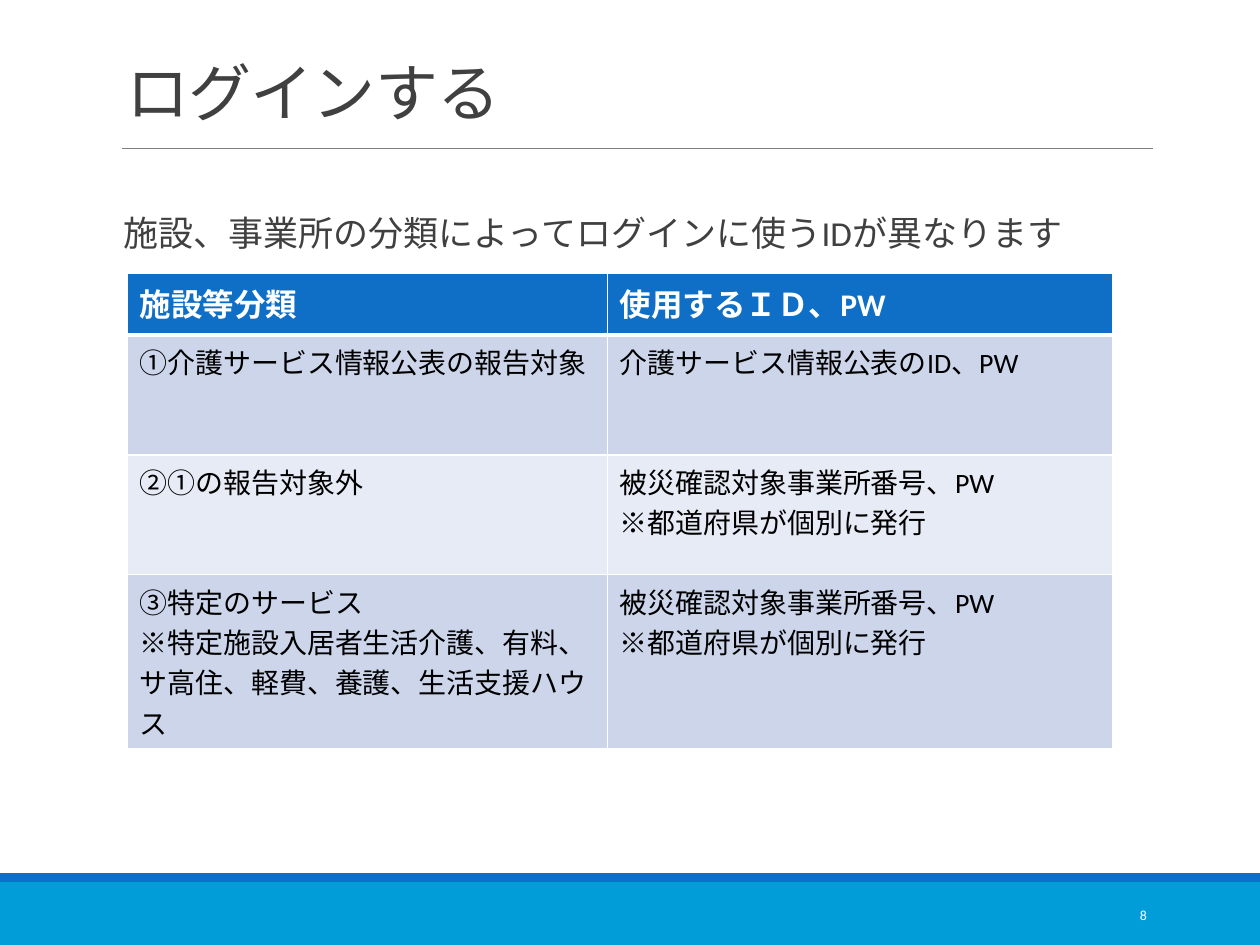
from lxml import etree
from pptx import Presentation
from pptx.dml.color import RGBColor
from pptx.enum.shapes import MSO_CONNECTOR, MSO_SHAPE
from pptx.enum.text import MSO_ANCHOR, MSO_AUTO_SIZE, PP_ALIGN
from pptx.oxml.ns import qn
from pptx.util import Inches, Pt

LEFT, RIGHT = PP_ALIGN.LEFT, PP_ALIGN.RIGHT
TOP, MIDDLE, BOTTOM = MSO_ANCHOR.TOP, MSO_ANCHOR.MIDDLE, MSO_ANCHOR.BOTTOM
NO_FIT = MSO_AUTO_SIZE.NONE
RECT, STRAIGHT = MSO_SHAPE.RECTANGLE, MSO_CONNECTOR.STRAIGHT

FONT = "Calibri"
BLUE, CYAN, GRAY, TEXT = "0F6FC6", "009DD9", "808080", "404040"
WHITE, BLACK = "FFFFFF", "000000"
BANDS = ("CCD5EA", "E7EBF5")


def rgb(value):
    return RGBColor.from_string(value)


class SlideBuilder:
    def __init__(self, s):
        self.s = s

    def style(self, p, size, color, bold=False):
        for r in p.runs:
            r.font.name, r.font.size, r.font.bold = FONT, Pt(size), bold
            r.font.color.rgb = rgb(color)
            r._r.get_or_add_rPr().set("lang", "ja-JP")

    def bar(self, x, y, w, h, color):
        sp = self.s.shapes.add_shape(RECT, Inches(x), Inches(y), Inches(w), Inches(h))
        sp.shadow.inherit = False
        sp.fill.solid()
        sp.fill.fore_color.rgb = rgb(color)
        sp.line.fill.background()

    def rule(self, x1, x2, y, color, width):
        line = self.s.shapes.add_connector(
            STRAIGHT, Inches(x1), Inches(y), Inches(x2), Inches(y))
        line.line.color.rgb = rgb(color)
        line.line.width = Pt(width)
        etree.SubElement(line._element.spPr, qn("a:effectLst"))

    def set_text(self, sp, box, text, size, color, anchor, align=LEFT):
        sp.left, sp.top, sp.width, sp.height = map(Inches, box)
        tf = sp.text_frame
        tf.text = text
        tf.word_wrap, tf.auto_size, tf.vertical_anchor = True, NO_FIT, anchor
        p = tf.paragraphs[0]
        p.alignment = align
        self.style(p, size, color)
        return p

    def title(self, box, text):
        p = self.set_text(self.s.shapes.title, box, text, 36, TEXT, BOTTOM)
        p.line_spacing = 0.85
        p.runs[0]._r.get_or_add_rPr().set("spc", "-40")

    def body(self, box, text):
        sp = self.s.placeholders[1]
        p = self.set_text(sp, box, text, 20, TEXT, TOP)
        sp.text_frame.margin_left = sp.text_frame.margin_right = 0
        p.line_spacing, p.space_before, p.space_after = 0.9, Pt(0), Pt(1.5)
        # Blank bullet with a small hanging indent
        pPr = p._p.get_or_add_pPr()
        pPr.set("marL", str(Inches(0.07)))
        pPr.set("indent", str(-Inches(0.07)))
        etree.SubElement(pPr, qn("a:buChar"), char=" ")

    def label(self, box, text, size, color, align):
        sp = self.s.shapes.add_textbox(*map(Inches, box))
        self.set_text(sp, box, text, size, color, MIDDLE, align)

    def border(self, cell, side, width):
        ln = etree.SubElement(cell._tc.get_or_add_tcPr(), qn(f"a:ln{side}"),
                              w=str(Pt(width)))
        fill = etree.SubElement(ln, qn("a:solidFill"))
        etree.SubElement(fill, qn("a:srgbClr"), val=WHITE)

    def table(self, x, y, widths, heights, rows):
        table = self.s.shapes.add_table(
            len(rows), len(widths), Inches(x), Inches(y),
            Inches(sum(widths)), Inches(sum(heights))).table
        for column, width in zip(table.columns, widths):
            column.width = Inches(width)
        for i, (row, height) in enumerate(zip(rows, heights)):
            table.rows[i].height = Inches(height)
            header = i == 0
            for j, text in enumerate(row):
                cell = table.cell(i, j)
                cell.text = text
                for p in cell.text_frame.paragraphs:
                    self.style(p, 18 if header else 16,
                               WHITE if header else BLACK, header)
                # Thick line between the header and the first row
                for side in "LRTB":
                    thick = (side, i) in (("B", 0), ("T", 1))
                    self.border(cell, side, 3 if thick else 1)
                cell.fill.solid()
                cell.fill.fore_color.rgb = rgb(BLUE if header else BANDS[(i - 1) % 2])


def main():
    prs = Presentation()
    prs.slide_width, prs.slide_height = Inches(10), Inches(7.5)
    b = SlideBuilder(prs.slides.add_slide(prs.slide_layouts[1]))

    # Footer bars and title rule
    b.bar(0, 7, 10, 0.5, CYAN)
    b.bar(0, 6.93, 10, 0.07, BLUE)
    b.rule(0.97, 9.15, 1.18, GRAY, 0.5)

    # Title and lead sentence
    b.title((0.9, 0.31, 8.25, 0.77), "ログインする")
    b.body((0.9, 1.67, 8.25, 4.75),
           "施設、事業所の分類によってログインに使うIDが異なります")

    # Login IDs by facility class
    issued = "被災確認対象事業所番号、PW\n※都道府県が個別に発行"
    b.table(1.01, 2.17, (3.81, 4.01), (0.49, 0.95, 0.95, 1.27), [
        ("施設等分類", "使用するＩＤ、PW"),
        ("➀介護サービス情報公表の報告対象", "介護サービス情報公表のID、PW"),
        ("②➀の報告対象外", issued),
        ("③特定のサービス\n※特定施設入居者生活介護、有料、サ高住、軽費、養護、生活支援ハウス",
         issued),
    ])

    # Slide number
    b.label((8.12, 7.06, 1.08, 0.4), "8", 7.9, WHITE, RIGHT)

    prs.save("out.pptx")


if __name__ == "__main__":
    main()
